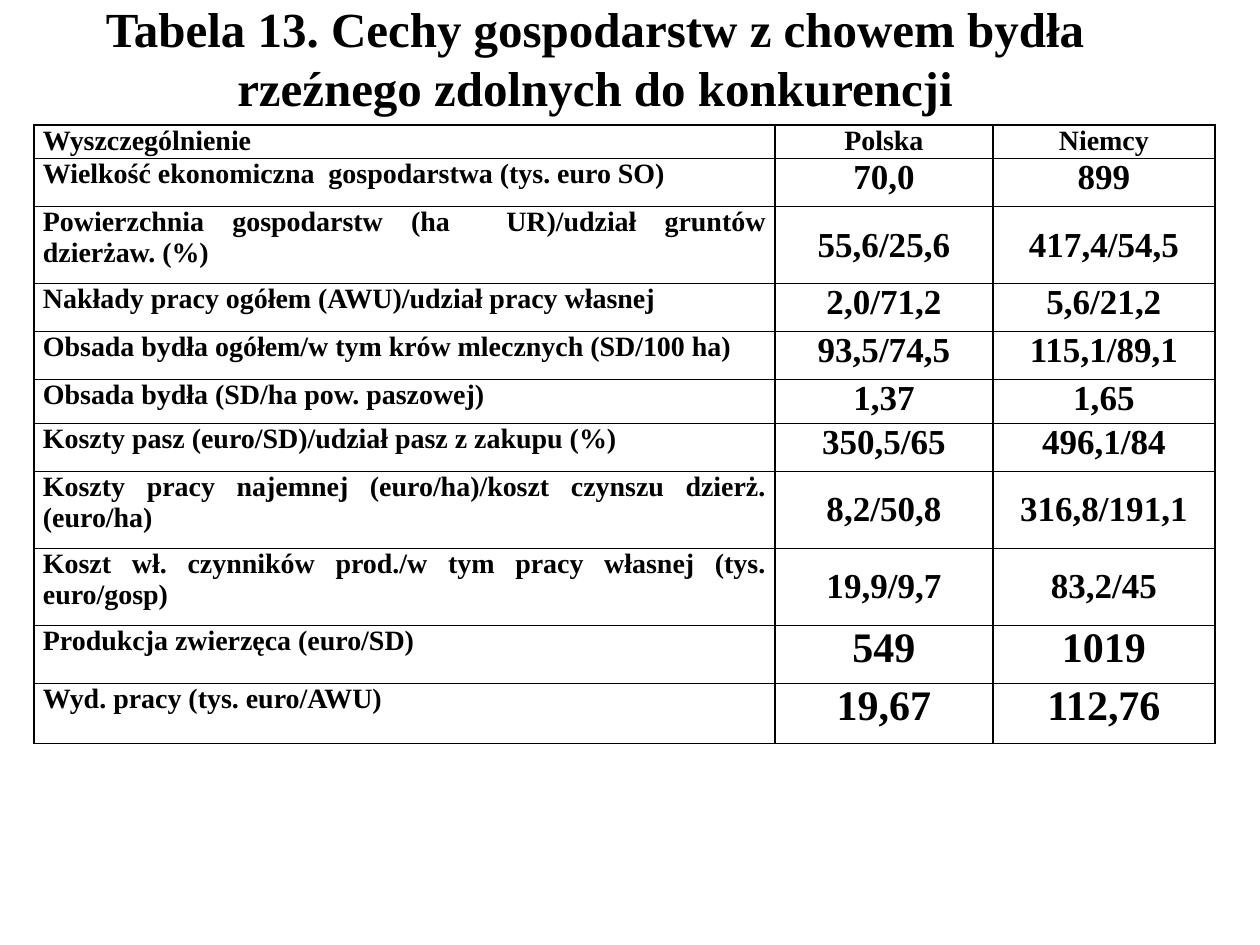
from lxml import etree
from pptx import Presentation
from pptx import util as u
from pptx.dml.color import RGBColor
from pptx.enum import text as t
from pptx.oxml import ns

PX = 914400 // 126
BLACK = RGBColor(0, 0, 0)
WHITE = RGBColor(255, 255, 255)
FONT = "Times New Roman"
MID, TOP = t.MSO_ANCHOR.MIDDLE, t.MSO_ANCHOR.TOP
CENTER, JUSTIFY = t.PP_ALIGN.CENTER, t.PP_ALIGN.JUSTIFY

TITLE = "Tabela 13. Cechy gospodarstw z chowem bydła rzeźnego zdolnych do konkurencji"
COLS = [741, 218, 222]
# height in px, size of the values in points, their anchor, texts
ROWS = [
    (31, 16, TOP, "Wyszczególnienie", "Polska", "Niemcy"),
    (48, 20, TOP, "Wielkość ekonomiczna  gospodarstwa (tys. euro SO)", "70,0", "899"),
    (77, 20, MID, "Powierzchnia gospodarstw (ha  UR)/udział gruntów dzierżaw. (%)",
     "55,6/25,6", "417,4/54,5"),
    (48, 20, TOP, "Nakłady pracy ogółem (AWU)/udział pracy własnej", "2,0/71,2", "5,6/21,2"),
    (48, 20, TOP, "Obsada bydła ogółem/w tym krów mlecznych (SD/100 ha)",
     "93,5/74,5", "115,1/89,1"),
    (44, 20, TOP, "Obsada bydła (SD/ha pow. paszowej)", "1,37", "1,65"),
    (48, 20, TOP, "Koszty pasz (euro/SD)/udział pasz z zakupu (%)", "350,5/65", "496,1/84"),
    (77, 20, MID, "Koszty pracy najemnej (euro/ha)/koszt czynszu dzierż. (euro/ha)",
     "8,2/50,8", "316,8/191,1"),
    (77, 20, MID, "Koszt wł. czynników prod./w tym pracy własnej (tys. euro/gosp)",
     "19,9/9,7", "83,2/45"),
    (58, 24, TOP, "Produkcja zwierzęca (euro/SD)", "549", "1019"),
    (60, 24, TOP, "Wyd. pracy (tys. euro/AWU)", "19,67", "112,76"),
]


def write(frame, words, size=16, align=CENTER):
    para = frame.paragraphs[0]
    para.alignment = align
    run = para.add_run()
    run.text = words
    font = run.font
    font.name, font.size, font.bold = FONT, u.Pt(size), True
    font.color.rgb = BLACK


def frame_cell(cell, color=BLACK, width=1):
    """Draw a line on all four sides; call it before setting the fill."""
    props = cell._tc.get_or_add_tcPr()
    for side in ("lnL", "lnR", "lnT", "lnB"):
        line = etree.SubElement(props, ns.qn(f"a:{side}"), w=str(u.Pt(width)))
        fill = etree.SubElement(line, ns.qn("a:solidFill"))
        etree.SubElement(fill, ns.qn("a:srgbClr"), val=str(color))


def add_title(slide, x, y, w, h):
    box = slide.shapes.add_textbox(x * PX, y * PX, w * PX, h * PX)
    frame = box.text_frame
    frame.word_wrap = True
    frame.vertical_anchor = MID
    write(frame, TITLE, size=28)


def add_grid(slide, x, y):
    high = sum(row[0] for row in ROWS)
    shape = slide.shapes.add_table(len(ROWS), len(COLS), x * PX, y * PX,
                                   sum(COLS) * PX, high * PX)
    table = shape.table
    table.first_row = table.horz_banding = False
    for col, wide in zip(table.columns, COLS):
        col.width = wide * PX
    for r, (tall, size, anchor, *words) in enumerate(ROWS):
        table.rows[r].height = tall * PX
        for c, word in enumerate(words):
            cell = table.cell(r, c)
            cell.margin_left = cell.margin_right = 9 * PX
            cell.margin_top = cell.margin_bottom = 0
            frame_cell(cell)
            if c == 0:
                cell.fill.background()
                write(cell.text_frame, word, align=JUSTIFY)
            else:
                cell.fill.solid()
                cell.fill.fore_color.rgb = WHITE
                cell.vertical_anchor = anchor
                write(cell.text_frame, word, size=size)


def main():
    deck = Presentation()
    deck.slide_width, deck.slide_height = u.Inches(10), u.Inches(7.5)
    slide = deck.slides.add_slide(deck.slide_layouts[6])
    add_title(slide, 64, 0, 1062, 115)
    add_grid(slide, 34, 125)
    deck.save("out.pptx")


if __name__ == "__main__":
    main()
